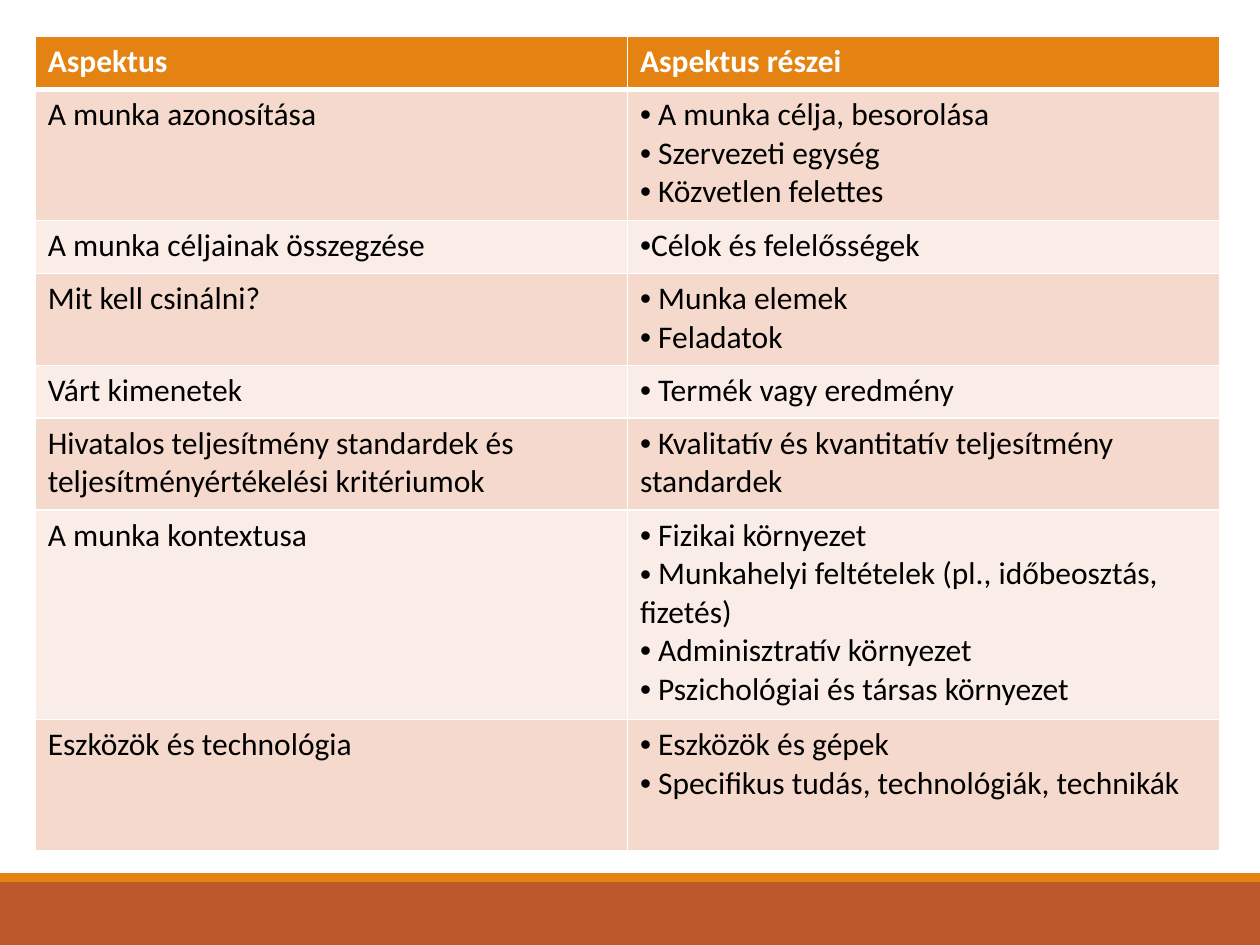
from lxml import etree
from pptx import Presentation
from pptx.dml.color import RGBColor
from pptx.enum.shapes import MSO_SHAPE
from pptx.oxml.ns import qn
from pptx.util import Inches, Pt

RECTANGLE = MSO_SHAPE.RECTANGLE
WHITE = RGBColor(0xFF, 0xFF, 0xFF)
BLACK = RGBColor(0x00, 0x00, 0x00)
ORANGE = RGBColor(0xE4, 0x83, 0x12)
RUST = RGBColor(0xBD, 0x58, 0x2C)
DARK_BAND = RGBColor(0xF5, 0xD9, 0xCC)
LIGHT_BAND = RGBColor(0xFA, 0xED, 0xE7)

COLUMNS, ROWS = 100, 75  # grid units across and down the slide
LINE_UNITS, PADDING_UNITS = 3.1, 1.1

HEADINGS = ("Aspektus", "Aspektus részei")
# Aspect, its parts, and the number of text lines the row leaves room for
ASPECTS = [
    ("A munka azonosítása",
     [" A munka célja, besorolása", " Szervezeti egység", " Közvetlen felettes"], 3),
    ("A munka céljainak összegzése", ["Célok és felelősségek"], 1),
    ("Mit kell csinálni?", [" Munka elemek", " Feladatok"], 2),
    ("Várt kimenetek", [" Termék vagy eredmény"], 1),
    ("Hivatalos teljesítmény standardek és teljesítményértékelési kritériumok",
     [" Kvalitatív és kvantitatív teljesítmény standardek"], 2),
    ("A munka kontextusa",
     [" Fizikai környezet", " Munkahelyi feltételek (pl., időbeosztás, fizetés)",
      " Adminisztratív környezet", " Pszichológiai és társas környezet"], 5),
    ("Eszközök és technológia",
     [" Eszközök és gépek", " Specifikus tudás, technológiák, technikák"], 3),
]


def grid(units):
    return Inches(units / 10)


def add_bullet(para):
    properties = para._p.get_or_add_pPr()
    properties.set("marL", "0")
    properties.set("indent", "0")
    etree.SubElement(properties, qn("a:buFont"), typeface="Arial")
    etree.SubElement(properties, qn("a:buChar"), char="•")


def add_borders(cell, **widths):
    """Draw white borders; widths are points for the sides L, R, T and B."""
    properties = cell._tc.get_or_add_tcPr()
    for side, width in widths.items():
        line = etree.SubElement(properties, qn(f"a:ln{side}"), w=str(Pt(width)))
        fill = etree.SubElement(line, qn("a:solidFill"))
        etree.SubElement(fill, qn("a:srgbClr"), val=str(WHITE))


class SlideBuilder:
    font_name = "Calibri"
    font_size = Pt(18)

    def __init__(self, slide):
        self.slide = slide

    def bar(self, top, height, color):
        box = self.slide.shapes.add_shape(
            RECTANGLE, 0, grid(top), grid(COLUMNS), grid(height))
        box.shadow.inherit = False
        box.fill.solid()
        box.fill.fore_color.rgb = color
        box.line.fill.background()

    def cell(self, cell, lines, fill, color=BLACK, bold=False, bulleted=False, bottom=1, top=1):
        add_borders(cell, L=1, R=1, T=top, B=bottom)
        cell.fill.solid()
        cell.fill.fore_color.rgb = fill
        cell.text = "\n".join(lines)
        for para in cell.text_frame.paragraphs:
            para.font.name = self.font_name
            para.font.size = self.font_size
            para.font.bold = bold
            para.font.color.rgb = color
            if bulleted:
                add_bullet(para)

    def table(self, left, top, width, headings, aspects):
        line_counts = [1] + [count for _, _, count in aspects]
        heights = [PADDING_UNITS + LINE_UNITS * count for count in line_counts]
        table = self.slide.shapes.add_table(
            len(heights), len(headings), grid(left), grid(top),
            grid(width), grid(sum(heights))).table
        for row, height in zip(table.rows, heights):
            row.height = grid(height)
        for column, heading in enumerate(headings):
            self.cell(table.cell(0, column), [heading], ORANGE, WHITE, bold=True, bottom=3)
        for row, (aspect, parts, _) in enumerate(aspects, start=1):
            fill = DARK_BAND if row % 2 else LIGHT_BAND
            top_width = 3 if row == 1 else 1
            self.cell(table.cell(row, 0), [aspect], fill, top=top_width)
            self.cell(table.cell(row, 1), parts, fill, bulleted=True, top=top_width)


def main():
    deck = Presentation()
    deck.slide_width, deck.slide_height = grid(COLUMNS), grid(ROWS)
    page = SlideBuilder(deck.slides.add_slide(deck.slide_layouts[6]))
    page.bar(top=70, height=5, color=RUST)
    page.bar(top=69.3, height=0.7, color=ORANGE)
    page.table(left=2.8, top=2.9, width=94, headings=HEADINGS, aspects=ASPECTS)
    deck.save("out.pptx")


if __name__ == "__main__":
    main()
